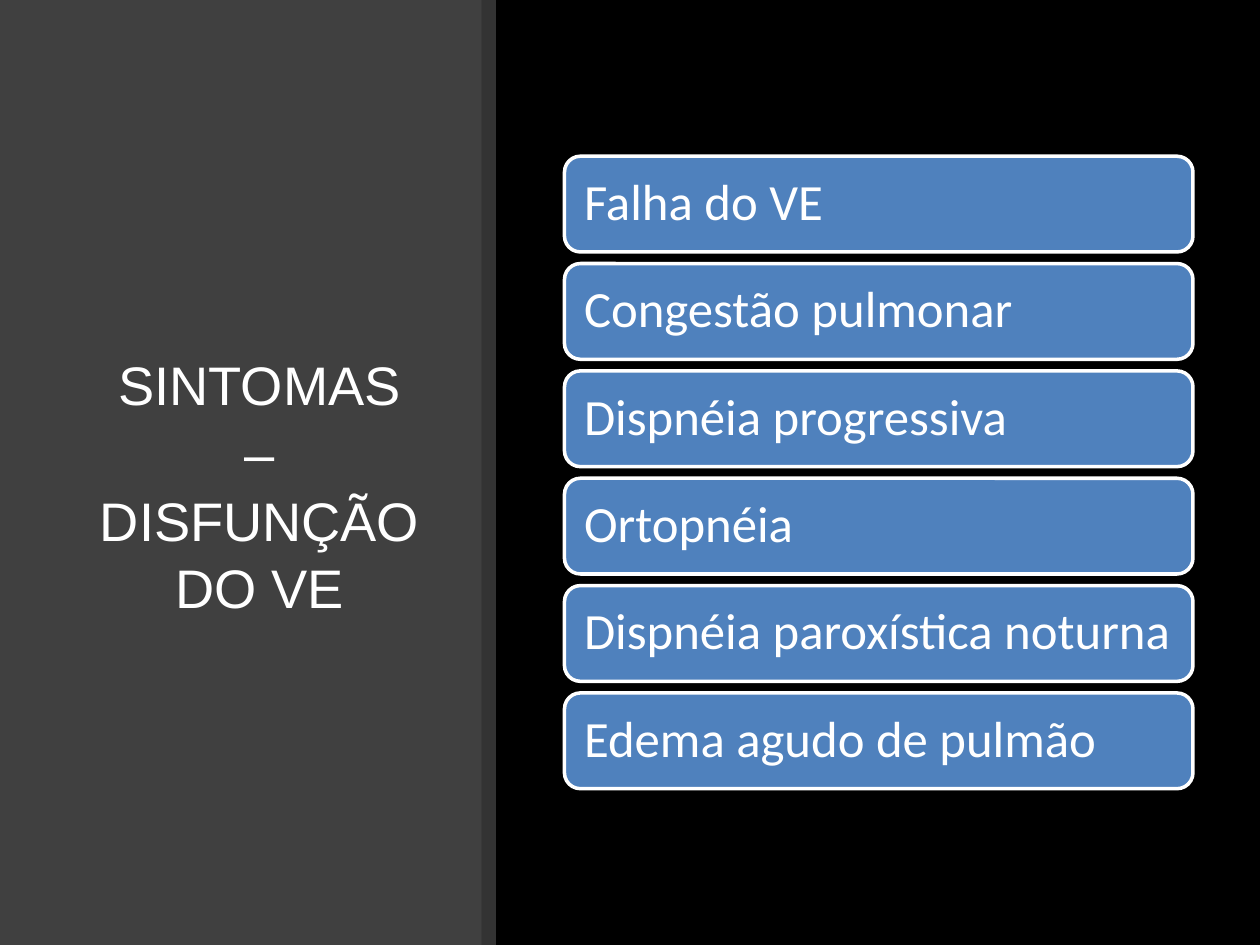
from lxml.etree import SubElement
from pptx import Presentation
from pptx.dml.color import RGBColor
from pptx.enum.shapes import MSO_SHAPE as Shape
from pptx.enum.text import MSO_ANCHOR as Anchor, MSO_AUTO_SIZE as AutoSize, PP_ALIGN as Align
from pptx.oxml.ns import qn
from pptx.util import Cm, Pt

SYMPTOMS = [
    "Falha do VE",
    "Congestão pulmonar",
    "Dispnéia progressiva",
    "Ortopnéia",
    "Dispnéia paroxística noturna",
    "Edema agudo de pulmão",
]


def paint(color_format, color):
    color_format.rgb = RGBColor.from_string(color)


class SlideBuilder:
    black, white, gray, blue = "000000", "FFFFFF", "404040", "4F81BD"
    heading_font, body_font = "Arial", "Calibri"
    heading_size, body_size = Pt(31), Pt(29)

    def __init__(self, slide):
        self.slide = slide
        background = slide.background.fill
        background.solid()
        paint(background.fore_color, self.black)

    def block(self, preset, box, color):
        block = self.slide.shapes.add_shape(preset, *map(Cm, box))
        block.shadow.inherit = False
        block.fill.solid()
        paint(block.fill.fore_color, color)
        block.line.fill.background()
        return block

    def band(self, box, color, opacity=100):
        band = self.block(Shape.RECTANGLE, box, color)
        if opacity < 100:
            tint = band.element.spPr.find(qn("a:solidFill"))[0]
            SubElement(tint, qn("a:alpha"), val=str(opacity * 1000))

    def set_text(self, frame, text, font, size, align, margins):
        """Fill a text frame; margins are horizontal and vertical, in cm."""
        frame.word_wrap = True
        frame.auto_size = AutoSize.NONE
        frame.vertical_anchor = Anchor.MIDDLE
        frame.margin_left = frame.margin_right = Cm(margins[0])
        frame.margin_top = frame.margin_bottom = Cm(margins[1])
        paragraph = frame.paragraphs[0]
        paragraph.alignment = align
        run = paragraph.add_run()
        run.text = text
        run.font.name, run.font.size = font, size
        paint(run.font.color, self.white)
        return paragraph

    def title(self, text, box):
        """Place the title in front of everything drawn so far."""
        title = self.slide.shapes.title
        title.left, title.top, title.width, title.height = map(Cm, box)
        title.element.getparent().append(title.element)
        paragraph = self.set_text(title.text_frame, text, self.heading_font,
                                  self.heading_size, Align.CENTER, (0.2, 0.13))
        paragraph.line_spacing = 1.04

    def card(self, text, box):
        card = self.block(Shape.ROUNDED_RECTANGLE, box, self.blue)
        paint(card.line.color, self.white)
        card.line.width = Pt(2)
        paragraph = self.set_text(card.text_frame, text, self.body_font,
                                  self.body_size, Align.LEFT, (0.3, 0.2))
        paragraph.line_spacing = 0.9


def main():
    deck = Presentation()
    deck.slide_width, deck.slide_height = Cm(25.4), Cm(19.05)
    title_only = deck.slide_layouts[5]
    builder = SlideBuilder(deck.slides.add_slide(title_only))

    panel_width, height = 9.7, 19.05
    builder.band((0, 0, panel_width, height), builder.gray)
    builder.title("SINTOMAS – DISFUNÇÃO DO VE", (1.75, 2.26, 6.96, 15.01))
    builder.band((panel_width, 0, 0.3, height), builder.white, opacity=20)

    first_top, last_top, card_height = 3.15, 13.97, 1.93
    pitch = (last_top - first_top) / (len(SYMPTOMS) - 1)
    for row, symptom in enumerate(SYMPTOMS):
        builder.card(symptom, (11.38, first_top + row * pitch, 12.67, card_height))

    deck.save("out.pptx")


if __name__ == "__main__":
    main()
